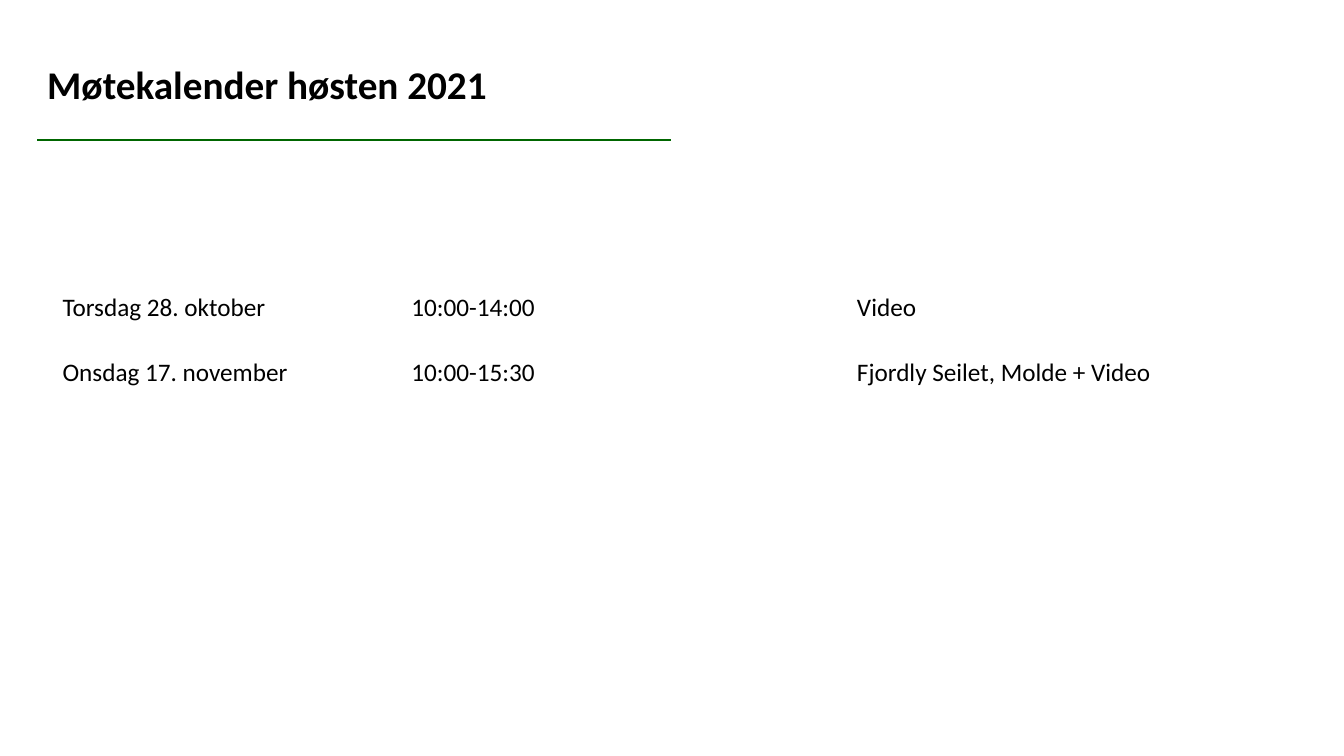
"""Builds the meeting calendar slide for autumn 2021."""
from pptx import Presentation
from pptx import util as u
from pptx.dml.color import RGBColor
from pptx.enum import shapes, text
from pptx.oxml import parse_xml
from pptx.oxml.ns import nsdecls

COLORS = {"text": "000000", "rule": "006600", "cell": "FFFFFF"}
MEETINGS = [
    ("", "", ""),
    ("", "", ""),
    ("Torsdag 28. oktober", "10:00-14:00", "Video"),
    ("Onsdag 17. november", "10:00-15:30", "Fjordly Seilet, Molde + Video"),
]
COLUMN_WIDTHS = [3.46, 4.42, 4.72]
ROW_HEIGHTS = [0.33, 0.33, 0.65, 0.65]


def style_font(para, size, bold=False):
    para.font.name = "Calibri"
    para.font.size = u.Pt(size)
    para.font.bold = bold
    para.font.color.rgb = RGBColor.from_string(COLORS["text"])


deck = Presentation()
deck.slide_width, deck.slide_height = u.Inches(13.33), u.Inches(7.5)
page = deck.slides.add_slide(deck.slide_layouts[6])

rule = page.shapes.add_connector(
    shapes.MSO_CONNECTOR.STRAIGHT,
    u.Inches(0.37), u.Inches(1.39), u.Inches(6.66), u.Inches(1.39))
rule.line.color.rgb = RGBColor.from_string(COLORS["rule"])
rule.line.width = u.Pt(1.5)
rule._element.spPr.append(parse_xml(f"<a:effectLst {nsdecls('a')}/>"))

title_box = page.shapes.add_textbox(
    u.Inches(0.37), u.Inches(0.6), u.Inches(11.98), u.Inches(0.79))
title_box.text_frame.word_wrap = True
title_box.text_frame.vertical_anchor = text.MSO_ANCHOR.TOP
title = title_box.text_frame.paragraphs[0]
title.text = "Møtekalender høsten 2021"
title.line_spacing = 0.9
style_font(title, 28, bold=True)

calendar = page.shapes.add_table(
    len(MEETINGS), len(COLUMN_WIDTHS), u.Inches(0.37), u.Inches(2),
    u.Inches(sum(COLUMN_WIDTHS)), u.Inches(sum(ROW_HEIGHTS))).table
calendar.first_row = calendar.horz_banding = False
for column, width in zip(calendar.columns, COLUMN_WIDTHS):
    column.width = u.Inches(width)

for row, height, meeting in zip(calendar.rows, ROW_HEIGHTS, MEETINGS):
    row.height = u.Inches(height)
    for cell, words in zip(row.cells, meeting):
        cell.margin_left, cell.margin_right = u.Inches(0.25), u.Inches(0.15)
        cell.margin_top = cell.margin_bottom = u.Inches(0.06)
        cell.vertical_anchor = text.MSO_ANCHOR.TOP
        for side in ("lnL", "lnR", "lnT", "lnB"):
            cell._tc.get_or_add_tcPr().append(parse_xml(
                f'<a:{side} {nsdecls("a")} w="{u.Pt(0.75)}"><a:solidFill>'
                f'<a:srgbClr val="{COLORS["cell"]}"/></a:solidFill></a:{side}>'))
        cell.fill.solid()
        cell.fill.fore_color.rgb = RGBColor.from_string(COLORS["cell"])
        para = cell.text_frame.paragraphs[0]
        if words:
            para.text = words
        style_font(para, 18)

deck.save("out.pptx")
